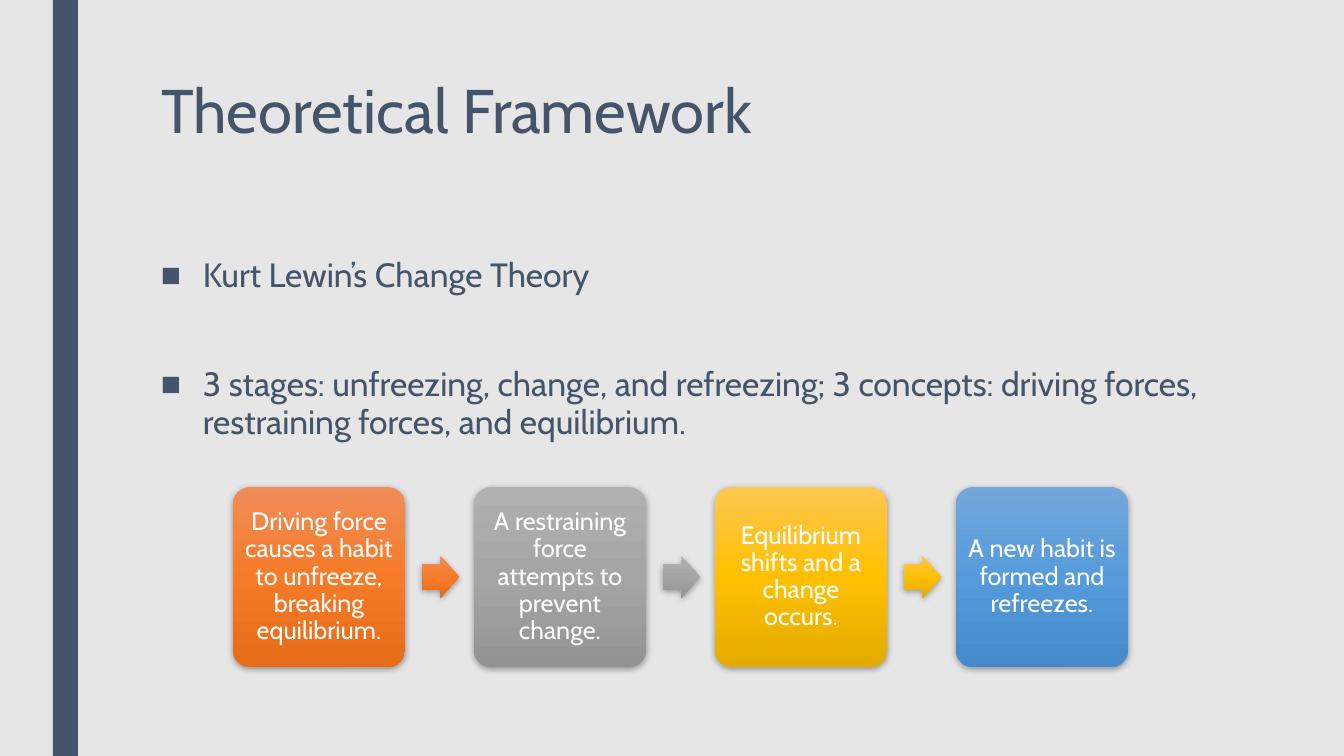
from lxml.etree import SubElement
from pptx import Presentation
from pptx.dml.color import RGBColor
from pptx.enum.shapes import MSO_SHAPE as Shape
from pptx.enum.text import MSO_ANCHOR as Anchor, PP_ALIGN as Align
from pptx.oxml.ns import qn
from pptx.util import Emu, Pt

FONT = "Cabin"
NAVY = "44546A"
BODY_LEFT, BODY_WIDTH = 151, 1058
STEP_LEFT, STEP_TOP, STEP_WIDTH, STEP_HEIGHT, STEP_PITCH = 233, 487, 172, 180, 241
ARROW_OFFSET, ARROW_WIDTH, ARROW_HEIGHT = 189, 37, 42
STEPS = [
    ("Driving force causes a habit to unfreeze, breaking equilibrium.",
     ("F18D59", "F67B28", "E56C19")),
    ("A restraining force attempts to prevent change.",
     ("B0B0B0", "A5A5A5", "939393")),
    ("Equilibrium shifts and a change occurs.",
     ("FFC752", "FFC000", "E3AB00")),
    ("A new habit is formed and refreezes.",
     ("73A7DB", "559BDB", "458ACA")),
]
POINTS = [
    ("Kurt Lewin’s Change Theory", 10),
    ("3 stages: unfreezing, change, and refreezing; 3 concepts: "
     "driving forces, restraining forces, and equilibrium.", 49),
]


def px(length):
    """Turn whole pixels into EMU."""
    return Emu(round(length * 914400 / 100.8))


def color(value):
    """Turn a hex string into a colour."""
    return RGBColor.from_string(value)


def style_text(paragraph, size, hue, spacing):
    """Format a paragraph and its runs."""
    paragraph.line_spacing = spacing
    for run in paragraph.runs:
        run.font.name = FONT
        run.font.size = Pt(size)
        run.font.color.rgb = color(hue)


def add_block(slide, preset, box, shades, adjustments):
    """Add a borderless shape with a vertical gradient and a soft shadow."""
    block = slide.shapes.add_shape(preset, *map(px, box))
    for index, value in enumerate(adjustments):
        block.adjustments[index] = value
    block.line.fill.background()
    block.fill.gradient()
    block.fill.gradient_angle = 270
    block.shadow.inherit = False
    properties = block.element.spPr
    stops = properties.find(qn("a:gradFill")).find(qn("a:gsLst"))
    stops.clear()
    for index, shade in enumerate(shades):
        stop = SubElement(stops, qn("a:gs"), pos=str(index * 50000))
        SubElement(stop, qn("a:srgbClr"), val=shade)
    shadow = SubElement(properties.find(qn("a:effectLst")), qn("a:outerShdw"),
                        blurRad=str(Pt(4.5)), dist=str(Pt(1.5)),
                        dir="5400000", algn="ctr", rotWithShape="0")
    tint = SubElement(shadow, qn("a:srgbClr"), val="000000")
    SubElement(tint, qn("a:alpha"), val="35000")
    return block


def add_step(slide, left, message, shades):
    """Add one rounded step with centred text."""
    step = add_block(slide, Shape.ROUNDED_RECTANGLE,
                     (left, STEP_TOP, STEP_WIDTH, STEP_HEIGHT), shades, [0.1])
    frame = step.text_frame
    frame.word_wrap = True
    frame.vertical_anchor = Anchor.MIDDLE
    frame.margin_left = frame.margin_right = px(7)
    frame.margin_top = frame.margin_bottom = px(7)
    frame.text = message
    frame.paragraphs[0].alignment = Align.CENTER
    style_text(frame.paragraphs[0], 18, "FFFFFF", 0.9)


def add_arrow(slide, left, shades):
    """Add the arrow that leads to the next step."""
    top = STEP_TOP + (STEP_HEIGHT - ARROW_HEIGHT) // 2
    add_block(slide, Shape.RIGHT_ARROW,
              (left, top, ARROW_WIDTH, ARROW_HEIGHT), shades, [0.6, 0.5])


def add_points(slide):
    """Add the bulleted points."""
    frame = slide.shapes.add_textbox(
        *map(px, (BODY_LEFT, 252, BODY_WIDTH, 395))).text_frame
    frame.word_wrap = True
    frame.text = "\n".join(wording for wording, _ in POINTS)
    for paragraph, (_, gap) in zip(frame.paragraphs, POINTS):
        style_text(paragraph, 24, NAVY, 0.94)
        paragraph.space_before = Pt(gap)
        paragraph.space_after = Pt(2)
        properties = paragraph._p.get_or_add_pPr()
        properties.set("marL", str(px(42)))
        properties.set("indent", str(-px(42)))
        SubElement(properties, qn("a:buFont"), typeface="Arial")
        SubElement(properties, qn("a:buChar"), char="■")


def add_title(slide):
    """Place and format the title."""
    title = slide.shapes.title
    title.left, title.top, title.width, title.height = map(
        px, (BODY_LEFT, 76, BODY_WIDTH, 163))
    frame = title.text_frame
    frame.text = "Theoretical Framework"
    frame.vertical_anchor = Anchor.TOP
    frame.paragraphs[0].alignment = Align.LEFT
    style_text(frame.paragraphs[0], 44, NAVY, 0.89)


def add_side_bar(slide):
    """Add the vertical bar at the left."""
    bar = slide.shapes.add_shape(Shape.RECTANGLE, *map(px, (53, 0, 25, 756)))
    bar.fill.solid()
    bar.fill.fore_color.rgb = color(NAVY)
    bar.line.fill.background()
    bar.shadow.inherit = False


def main():
    """Build and save the slide."""
    deck = Presentation()
    deck.slide_width, deck.slide_height = px(1344), px(756)
    slide = deck.slides.add_slide(deck.slide_layouts[5])
    slide.background.fill.solid()
    slide.background.fill.fore_color.rgb = color("E7E6E6")
    add_side_bar(slide)
    add_title(slide)
    add_points(slide)
    for index, (message, shades) in enumerate(STEPS):
        left = STEP_LEFT + index * STEP_PITCH
        add_step(slide, left, message, shades)
        if index < len(STEPS) - 1:
            add_arrow(slide, left + ARROW_OFFSET, shades)
    deck.save("out.pptx")


if __name__ == "__main__":
    main()
